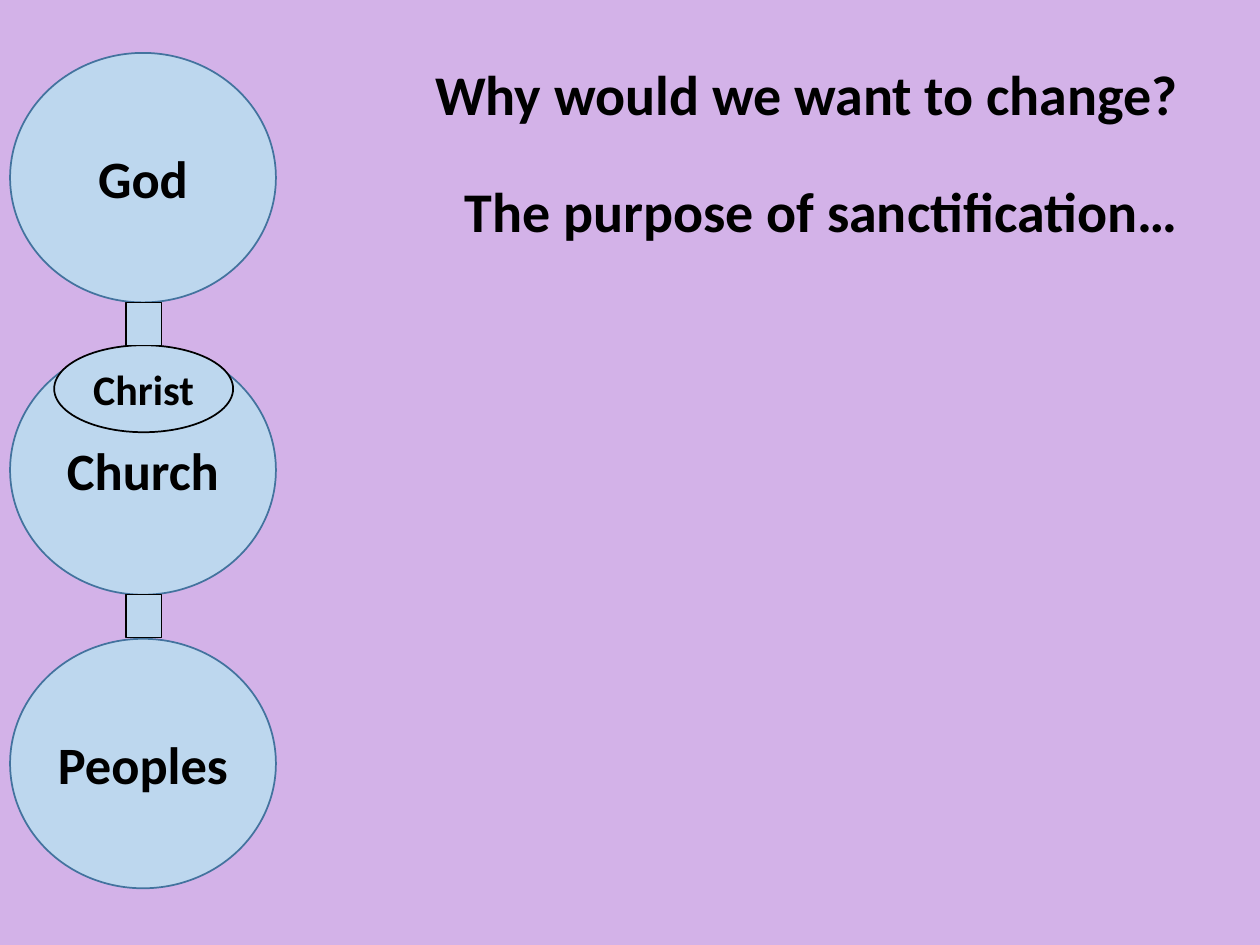
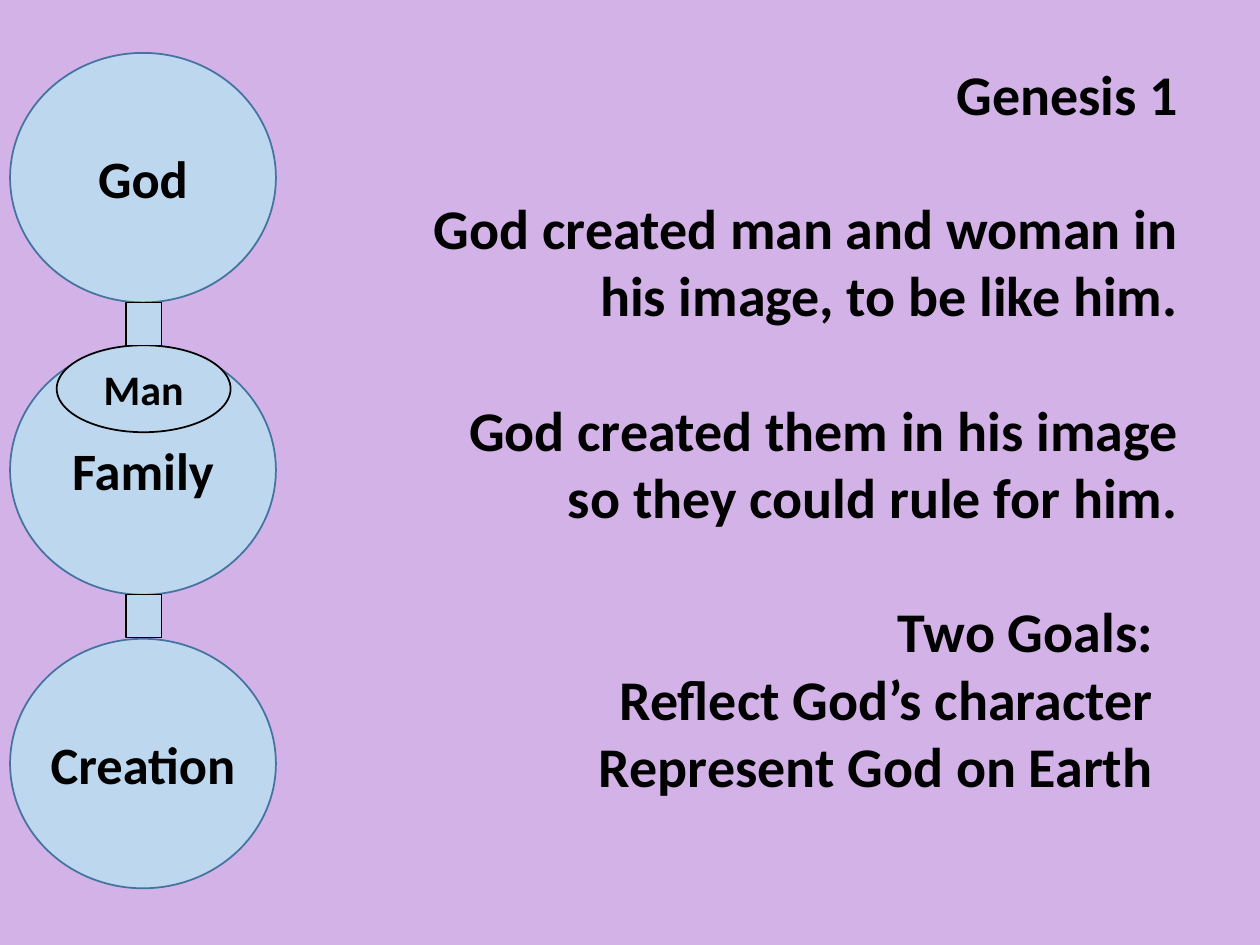
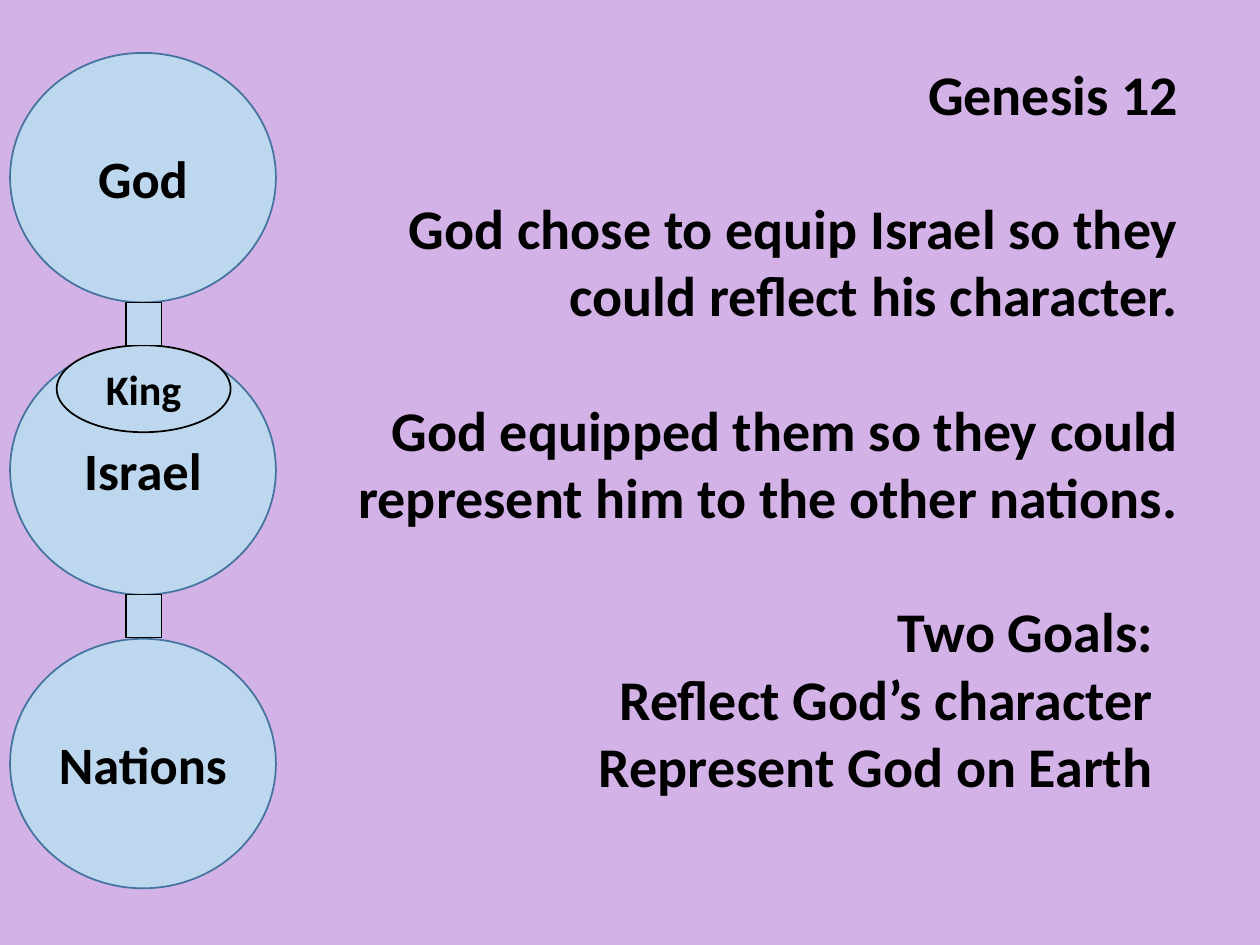
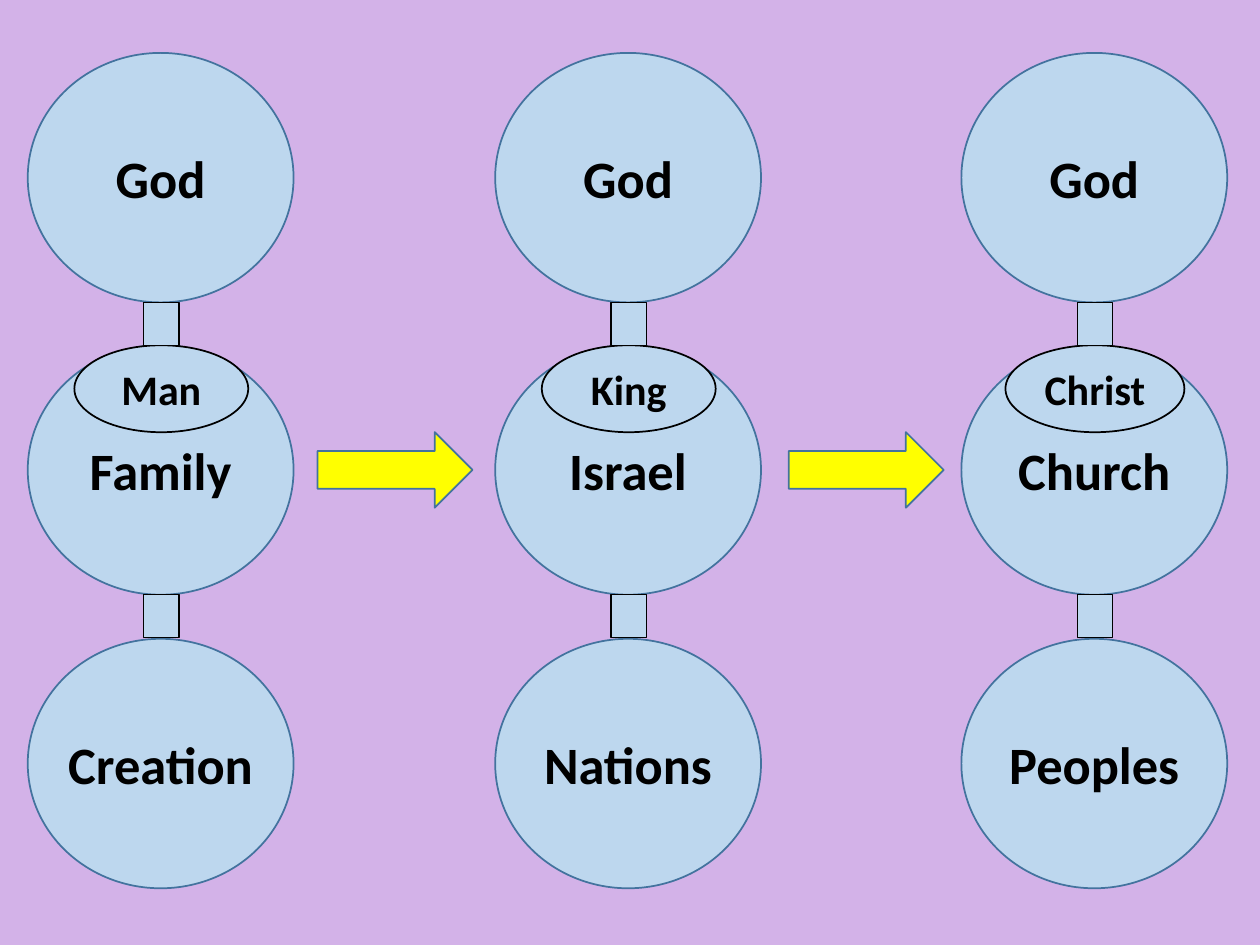
from pptx import Presentation
from pptx.dml.color import RGBColor
from pptx.enum.shapes import MSO_SHAPE
from pptx.enum.text import MSO_ANCHOR, MSO_AUTO_SIZE, PP_ALIGN
from pptx.util import Emu, Pt

PX = 9144  # EMU per px, 100 px to the inch
COLORS = {"background": "D3B2E8", "circle": "BDD7EE", "outline": "43739E",
          "arrow": "FFFF00", "black": "000000"}
FONT = "Calibri"

# Chain geometry
CIRCLE_W, CIRCLE_H = 211, 198
CIRCLE_TOPS = (42, 274, 507)
MEDIATOR_H = 69
LINK_W, LINK_H = 28, 34

# Each chain: top, middle and bottom circle, mediator, mediator width
CREATION = ("God", "Family", "Creation", "Man", 138)
ISRAEL = ("God", "Israel", "Nations", "King", 138)
CHURCH = ("God", "Church", "Peoples", "Christ", 142)

TEXT_RIGHT, TEXT_TOP = 945, 42
GOAL_INDENT = 20


def color(name):
    return RGBColor.from_string(COLORS[name])


class Deck:
    """Holds the shared style and the current slide."""

    def __init__(self):
        self.prs = Presentation()
        self.prs.slide_width, self.prs.slide_height = Emu(1000 * PX), Emu(750 * PX)
        background = self.prs.slide_master.background.fill
        background.solid()
        background.fore_color.rgb = color("background")
        self.slide = None

    def new_slide(self):
        self.slide = self.prs.slides.add_slide(self.prs.slide_layouts[6])

    def style_text(self, paragraph, size, align):
        paragraph.alignment = align
        for run in paragraph.runs:
            run.font.name = FONT
            run.font.size = Pt(size)
            run.font.bold = True
            run.font.color.rgb = color("black")

    def shape(self, parent, kind, box, fill, line="black", weight=1.0,
              label="", size=30, side_inset=10):
        shape = parent.add_shape(kind, *(Emu(v * PX) for v in box))
        shape.shadow.inherit = False
        shape.fill.solid()
        shape.fill.fore_color.rgb = color(fill)
        shape.line.color.rgb = color(line)
        shape.line.width = Pt(weight)
        if label:
            frame = shape.text_frame
            frame.text = label
            frame.word_wrap = True
            frame.vertical_anchor = MSO_ANCHOR.MIDDLE
            frame.margin_left = frame.margin_right = Emu(side_inset * PX)
            self.style_text(frame.paragraphs[0], size, PP_ALIGN.CENTER)

    def chain(self, left, names):
        """Three circles joined by links, with a mediator on the middle one."""
        *circles, mediator, mediator_w = names
        group = self.slide.shapes.add_group_shape().shapes

        def centred(width):
            return left + (CIRCLE_W - width + 1) // 2

        for name, top in zip(circles, CIRCLE_TOPS):
            self.shape(group, MSO_SHAPE.OVAL, (left, top, CIRCLE_W, CIRCLE_H),
                       "circle", "outline", label=name,
                       side_inset=0 if name == circles[-1] else 10)
        self.shape(group, MSO_SHAPE.OVAL,
                   (centred(mediator_w), CIRCLE_TOPS[1], mediator_w, MEDIATOR_H),
                   "circle", label=mediator, size=24)
        for top in CIRCLE_TOPS[:2]:
            self.shape(group, MSO_SHAPE.RECTANGLE,
                       (centred(LINK_W), top + CIRCLE_H, LINK_W, LINK_H),
                       "circle", weight=0.75)

    def statement(self, left, height, blocks, gap):
        """Right-aligned text; each block of lines is set off by a gap."""
        box = self.slide.shapes.add_textbox(
            *(Emu(v * PX) for v in (left, TEXT_TOP, TEXT_RIGHT - left, height)))
        frame = box.text_frame
        frame.word_wrap = True
        frame.auto_size = MSO_AUTO_SIZE.SHAPE_TO_FIT_TEXT
        frame.text = "\n".join(line for block in blocks for line in block)
        paragraphs = iter(frame.paragraphs)
        for number, block in enumerate(blocks):
            for position in range(len(block)):
                paragraph = next(paragraphs)
                self.style_text(paragraph, 32, PP_ALIGN.RIGHT)
                if number and position == 0:
                    paragraph.space_before = Pt(gap)
                # All but the last line of a block stand in from the right
                if position < len(block) - 1:
                    paragraph._p.get_or_add_pPr().set("marR", str(GOAL_INDENT * PX))

    def arrow(self, left):
        self.shape(self.slide.shapes, MSO_SHAPE.RIGHT_ARROW,
                   (left, 343, 123, 60), "arrow", "outline")


def main():
    deck = Deck()
    goals = ("Two Goals:", "Reflect God’s character", "Represent God on Earth")

    # Opening question
    deck.new_slide()
    deck.statement(323, 158, [("Why would we want to change?",),
                              ("The purpose of sanctification…",)], gap=28.8)
    deck.chain(8, CHURCH)

    # Genesis passages
    passages = [
        (CREATION, 323, "Genesis 1",
         "God created man and woman in his image, to be like him.",
         "God created them in his image so they could rule for him."),
        (ISRAEL, 263, "Genesis 12",
         "God chose to equip Israel so they could reflect his character.",
         "God equipped them so they could represent him to the other nations."),
    ]
    for names, text_left, *sentences in passages:
        deck.new_slide()
        deck.chain(8, names)
        deck.statement(text_left, 656, [(s,) for s in sentences] + [goals], gap=38.4)

    # The three chains side by side
    deck.new_slide()
    for left, names in ((763, CHURCH), (22, CREATION), (393, ISRAEL)):
        deck.chain(left, names)
    for left in (252, 626):
        deck.arrow(left)

    deck.prs.save("out.pptx")


if __name__ == "__main__":
    main()
